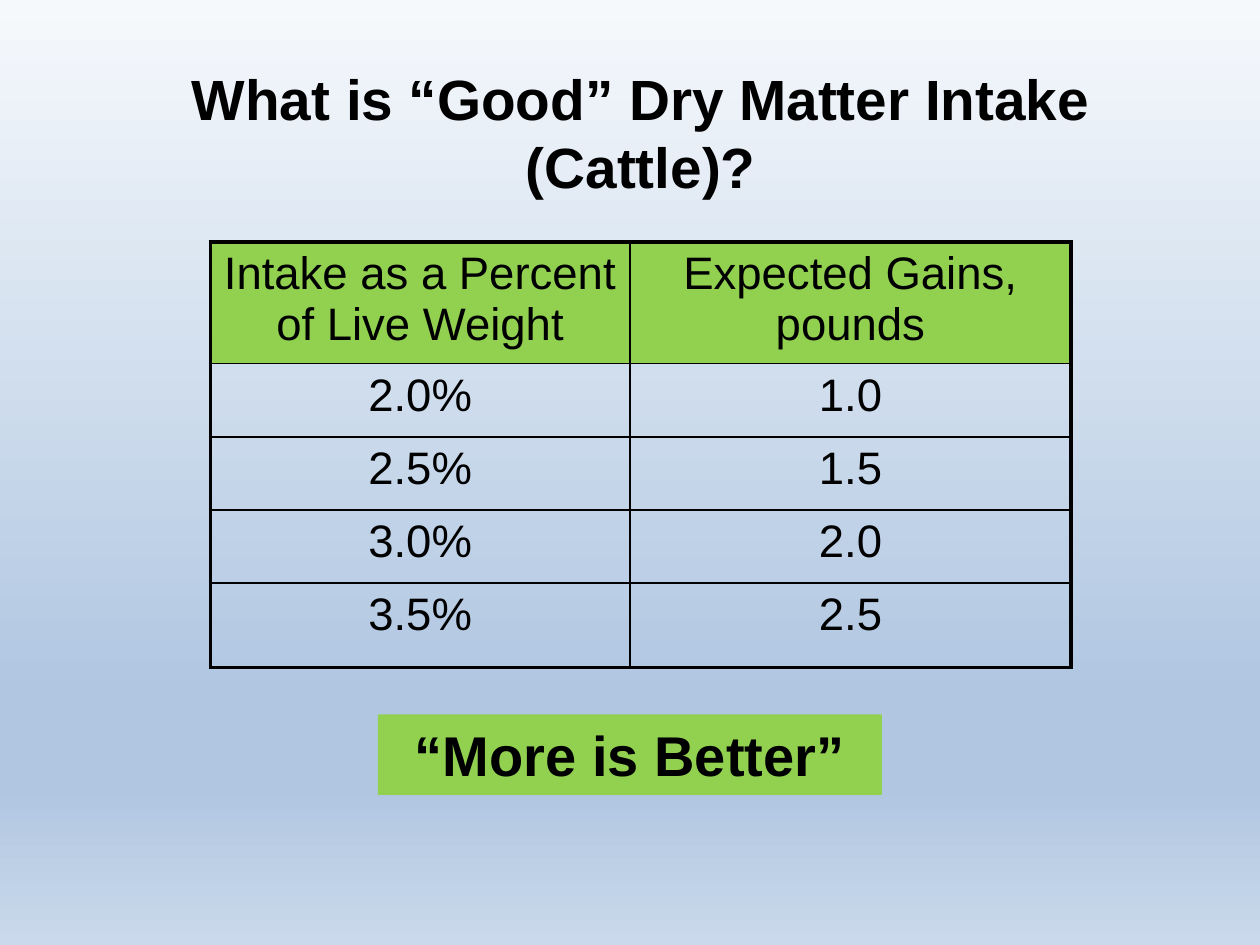
import copy

import pptx
import pptx.dml.color
import pptx.enum.shapes
import pptx.enum.text
import pptx.oxml
import pptx.oxml.ns
import pptx.util

RGBColor = pptx.dml.color.RGBColor
Inches = pptx.util.Inches
Pt = pptx.util.Pt

BLACK = RGBColor(0x00, 0x00, 0x00)
GREEN = RGBColor(0x92, 0xD0, 0x50)
SKY_STOPS = [
    (0, RGBColor(0xF6, 0xF9, 0xFC)),
    (0.74, RGBColor(0xB0, 0xC6, 0xE1)),
    (0.83, RGBColor(0xB0, 0xC6, 0xE1)),
    (1, RGBColor(0xCA, 0xD9, 0xEB)),
]

FONT = "Arial"
WIDTH, HEIGHT = Inches(10), Inches(7.5)
OUTER_LINE, INNER_LINE = Pt(2.25), Pt(1)
COLUMNS = [3.33, 3.5]
ROWS = [0.9, 0.58, 0.58, 0.58, 0.67]
INTAKE_GAINS = [
    ("Intake as a Percent of Live Weight", "Expected Gains, pounds"),
    ("2.0%", "1.0"),
    ("2.5%", "1.5"),
    ("3.0%", "2.0"),
    ("3.5%", "2.5"),
]


def paint_background(page):
    fill = page.background.fill
    fill.gradient()
    fill.gradient_angle = 270
    stop_list = page.element.find(".//" + pptx.oxml.ns.qn("a:gsLst"))
    while len(stop_list) < len(SKY_STOPS):
        stop_list.append(copy.deepcopy(stop_list[-1]))
    for stop, (position, color) in zip(fill.gradient_stops, SKY_STOPS):
        stop.position = position
        stop.color.rgb = color


def write_centred(frame, text, size, bold=False):
    frame.word_wrap = True
    para = frame.paragraphs[0]
    para.text = text
    para.alignment = pptx.enum.text.PP_ALIGN.CENTER
    para.font.name = FONT
    para.font.size = Pt(size)
    para.font.bold = bold
    para.font.color.rgb = BLACK


def add_title(page, text):
    box = page.shapes.add_textbox(Inches(0.5), Inches(0.42), Inches(9.17), Inches(1.25))
    box.text_frame.vertical_anchor = pptx.enum.text.MSO_ANCHOR.MIDDLE
    write_centred(box.text_frame, text, 32.4, bold=True)


def set_border(cell, side, width):
    line = pptx.oxml.parse_xml(
        f'<a:{side} {pptx.oxml.ns.nsdecls("a")} w="{width}">'
        f'<a:solidFill><a:srgbClr val="{BLACK}"/></a:solidFill></a:{side}>'
    )
    cell._tc.get_or_add_tcPr().append(line)


def style_cell(cell, row, column):
    outer_sides = {
        "lnL": column == 0,
        "lnR": column == len(COLUMNS) - 1,
        "lnT": row == 0,
        "lnB": row == len(ROWS) - 1,
    }
    for side, is_outer in outer_sides.items():
        set_border(cell, side, OUTER_LINE if is_outer else INNER_LINE)
    if row == 0:
        cell.fill.solid()
        cell.fill.fore_color.rgb = GREEN
    else:
        cell.fill.background()


def add_intake_table(page):
    table = page.shapes.add_table(
        len(ROWS), len(COLUMNS), Inches(1.67), Inches(1.92),
        Inches(sum(COLUMNS)), Inches(sum(ROWS)),
    ).table
    table.first_row = False
    table.horz_banding = False
    for column, width in zip(table.columns, COLUMNS):
        column.width = Inches(width)
    for row, height in zip(table.rows, ROWS):
        row.height = Inches(height)
    for row, texts in enumerate(INTAKE_GAINS):
        for column, text in enumerate(texts):
            cell = table.cell(row, column)
            style_cell(cell, row, column)
            write_centred(cell.text_frame, text, 26)


def add_banner(page, text):
    width = int(WIDTH * 0.4)
    banner = page.shapes.add_shape(
        pptx.enum.shapes.MSO_SHAPE.RECTANGLE,
        (WIDTH - width) // 2, Inches(5.67), width, Inches(0.64),
    )
    banner.shadow.inherit = False
    banner.fill.solid()
    banner.fill.fore_color.rgb = GREEN
    banner.line.fill.background()
    banner.text_frame.vertical_anchor = pptx.enum.text.MSO_ANCHOR.TOP
    write_centred(banner.text_frame, text, 32, bold=True)


def main():
    deck = pptx.Presentation()
    deck.slide_width, deck.slide_height = WIDTH, HEIGHT
    page = deck.slides.add_slide(deck.slide_layouts[6])
    paint_background(page)
    add_title(page, "What is “Good” Dry Matter Intake (Cattle)?")
    add_intake_table(page)
    add_banner(page, "“More is Better”")
    deck.save("out.pptx")


if __name__ == "__main__":
    main()
